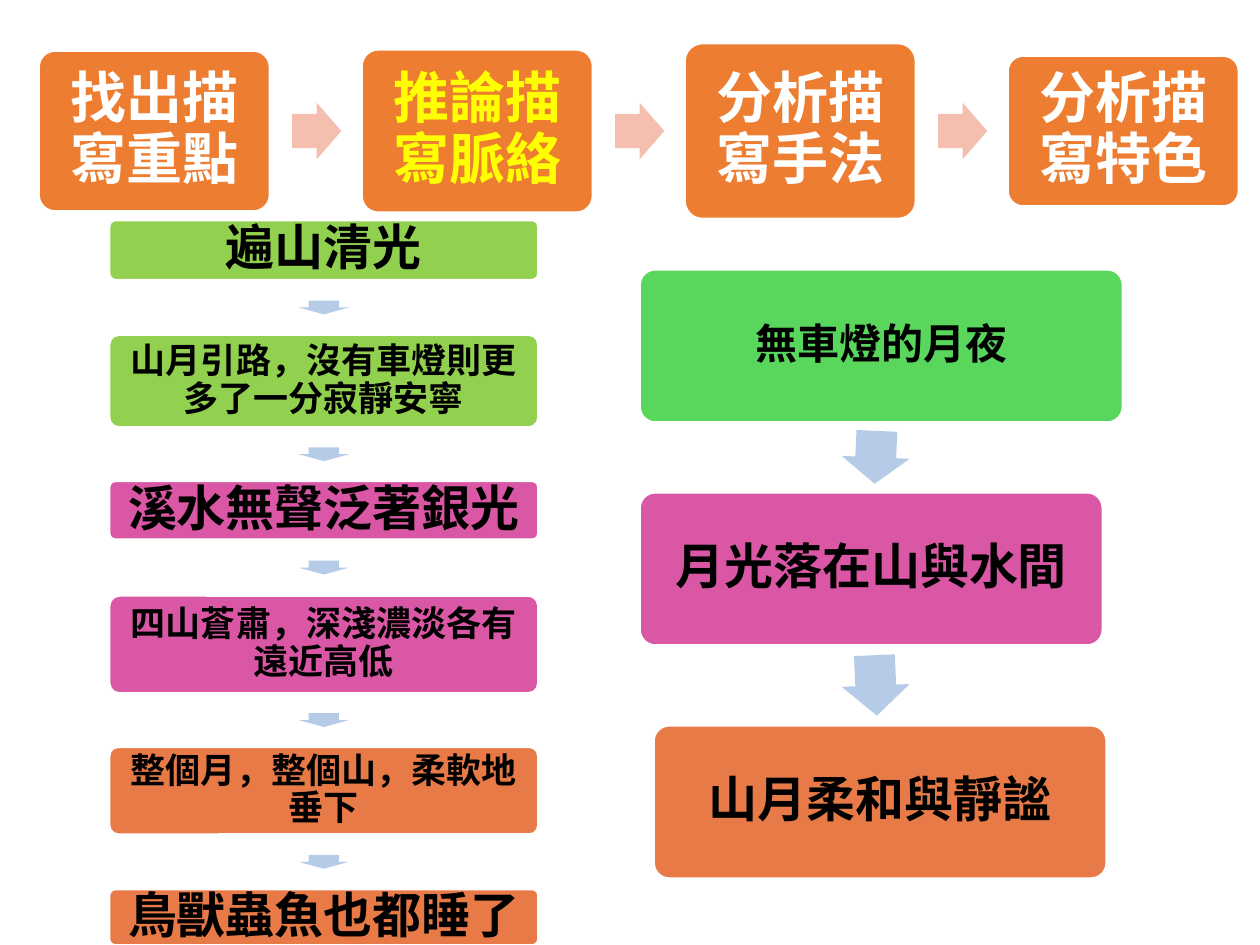
"""Build a slide of three flows that analyse a moonlit mountain passage."""
from lxml import etree
from pptx import Presentation
from pptx.dml.color import RGBColor
from pptx.enum.shapes import MSO_SHAPE
from pptx.enum.text import MSO_ANCHOR, PP_ALIGN
from pptx.oxml.ns import qn
from pptx.util import Inches, Pt

ROUNDED = MSO_SHAPE.ROUNDED_RECTANGLE
RIGHT_ARROW = MSO_SHAPE.RIGHT_ARROW
MIDDLE = MSO_ANCHOR.MIDDLE
CENTER = PP_ALIGN.CENTER
FONT = "Noto Sans CJK SC"
COLORS = {
    "white": "FFFFFF", "black": "000000", "yellow": "FFFF00",
    "orange": "ED7D31", "salmon": "F4BFAE", "blue": "B5CBE7",
    "lime": "92D050", "green": "59D75C", "pink": "D957A4", "coral": "E87A48",
}
INSETS = {20: 0.08, 24: 0.1, 28: 0.12, 32: 0.13}


def add_card(page, left, top, width, height, fill, text, size, color="black"):
    """Add a rounded box with centred bold text."""
    card = page.shapes.add_shape(
        ROUNDED, Inches(left), Inches(top), Inches(width), Inches(height))
    card.shadow.inherit = False
    card.adjustments[0] = 0.1
    card.fill.solid()
    card.fill.fore_color.rgb = RGBColor.from_string(COLORS[fill])
    card.line.color.rgb = RGBColor.from_string(COLORS["white"])
    card.line.width = Pt(1)
    frame = card.text_frame
    frame.word_wrap = True
    frame.vertical_anchor = MIDDLE
    inset = Inches(INSETS[size])
    frame.margin_left = frame.margin_right = inset
    frame.margin_top = frame.margin_bottom = inset
    para = frame.paragraphs[0]
    para.alignment = CENTER
    para.line_spacing = 0.9
    span = para.add_run()
    span.text = text
    span.font.size = Pt(size)
    span.font.bold = True
    span.font.color.rgb = RGBColor.from_string(COLORS[color])
    span.font.name = FONT
    east_asian = etree.SubElement(span.font._element, qn("a:ea"))
    east_asian.set("typeface", FONT)


def add_arrow(page, center_x, center_y, length, breadth, fill, rotation=0):
    """Add a block arrow around a centre point."""
    arrow = page.shapes.add_shape(
        RIGHT_ARROW, Inches(center_x - length / 2), Inches(center_y - breadth / 2),
        Inches(length), Inches(breadth))
    arrow.shadow.inherit = False
    arrow.adjustments[0] = 0.6
    arrow.adjustments[1] = 0.5
    arrow.rotation = rotation
    arrow.fill.solid()
    arrow.fill.fore_color.rgb = RGBColor.from_string(COLORS[fill])
    arrow.line.fill.background()


deck = Presentation()
deck.slide_width = Inches(10)
deck.slide_height = Inches(7.5)
page = deck.slides.add_slide(deck.slide_layouts[6])

steps = [
    ("找出描寫重點", 1.27, "white"),
    ("推論描寫脈絡", 1.29, "yellow"),
    ("分析描寫手法", 1.39, "white"),
    ("分析描寫特色", 1.19, "white"),
]
row_left, row_middle, step_width = 0.31, 1.04, 1.83
pitch = (8 - row_left) / (len(steps) - 1)
for index, (text, height, color) in enumerate(steps):
    left = row_left + index * pitch
    if index:
        add_arrow(page, left - 0.36, row_middle, 0.39, 0.45, "salmon")
    add_card(page, left, row_middle - height / 2, step_width, height,
             "orange", text, 32, color)

details = [
    ("遍山清光", 1.75, 0.47, "lime", 28),
    ("山月引路，沒有車燈則更多了一分寂靜安寧", 2.66, 0.73, "lime", 20),
    ("溪水無聲泛著銀光", 3.82, 0.46, "pink", 28),
    ("四山蒼肅，深淺濃淡各有遠近高低", 4.73, 0.77, "pink", 20),
    ("整個月，整個山，柔軟地垂下", 5.93, 0.69, "coral", 20),
    ("鳥獸蟲魚也都睡了", 7.06, 0.44, "coral", 28),
]
detail_left, detail_width = 0.87, 3.4
bottom = None
for text, top, height, fill, size in details:
    if bottom is not None:
        add_arrow(page, detail_left + detail_width / 2, (bottom + top) / 2,
                  0.11, 0.4, "blue", 90)
    add_card(page, detail_left, top, detail_width, height, fill, text, size)
    bottom = top + height

themes = [
    ("無車燈的月夜", 5.08, 2.14, 3.83, "green", 24, None),
    ("月光落在山與水間", 5.08, 3.91, 3.67, "pink", 28, 92.5),
    ("山月柔和與靜謐", 5.19, 5.76, 3.59, "coral", 28, 87.6),
]
theme_height = 1.21
for text, left, top, width, fill, size, rotation in themes:
    if rotation:
        gap = top - bottom
        add_arrow(page, 6.95, bottom + gap / 2, gap * 0.75, 0.54, "blue", rotation)
    add_card(page, left, top, width, theme_height, fill, text, size)
    bottom = top + theme_height

deck.save("out.pptx")
